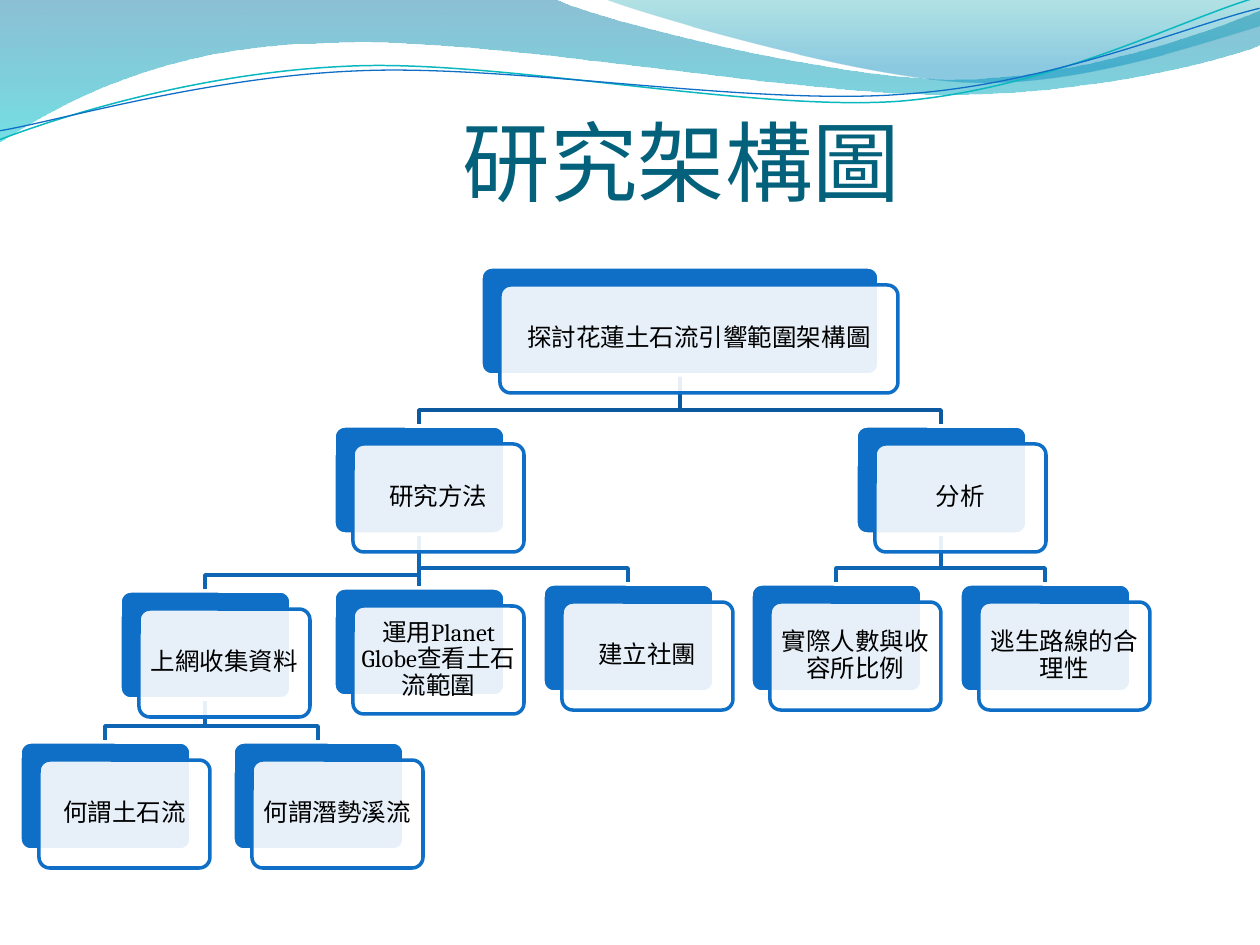
from lxml import etree
from pptx import Presentation
from pptx import util as u
from pptx.dml.color import RGBColor
from pptx.enum import shapes as s, text as t
from pptx.oxml.ns import qn

PX = 914400 / 126
BLUE = "0F6FC6"
rgb = RGBColor.from_string


def trace(pts, shut):
    """Draw a path; a pair is a line end, six numbers are a Bezier curve."""
    ends = [seg[-2:] for seg in pts]
    pen = tree.build_freeform(*ends[0], PX)
    pen.add_line_segments(ends[1:], close=shut)
    form = pen.convert_to_shape()
    form.shadow.inherit = False
    if not shut:
        form.fill.background()
    # turn line segments into curves where six numbers are given
    x, y = min(p for p, q in ends), min(q for p, q in ends)
    steps = form._element.findall(".//" + qn("a:lnTo"))
    for step, seg in zip(steps, pts[1:]):
        if len(seg) == 6:
            step.clear()
            curve = etree.SubElement(step.getparent(), qn("a:cubicBezTo"))
            step.getparent().replace(step, curve)
            for p, q in zip(seg[::2], seg[1::2]):
                dot = etree.SubElement(curve, qn("a:pt"))
                dot.set("x", str(p - x))
                dot.set("y", str(q - y))
    return form


def fade(node, pct):
    """Set the opacity of the colour inside an XML node."""
    tone = node.find(".//" + qn("a:srgbClr"))
    etree.SubElement(tone, qn("a:alpha")).set("val", str(pct * 1000))


deck = Presentation()
deck.slide_width, deck.slide_height = u.Inches(10), u.Inches(7.5)
slide = deck.slides.add_slide(deck.slide_layouts[5])
tree = slide.shapes

# Waves: points, then (position, colour, opacity) of each stop
waves = [
    ([(0, 0), (554, -1), (600, 21, 837, 79, 955, 79),
      (1075, 79, 1207, 33, 1260, 11), (1261, 45),
      (1239, 55, 1096, 96, 940, 94), (783, 94, 481, 35, 324, 43),
      (163, 45, 58, 105, -1, 142)],
     [(0, "0074A1", 45), (100, "00C6CF", 55)]),
    ([(604, -1), (641, 14, 859, 78, 969, 82),
      (1079, 87, 1211, 40, 1260, 26), (1260, 0)],
     [(0, "00A1A9", 30), (80, "008BBF", 45)]),
]
for pts, stops in waves:
    wave = trace(pts, True)
    wave.line.fill.background()
    wave.fill.gradient()
    wave.fill.gradient_angle = 270
    nodes = wave._element.spPr.findall(".//" + qn("a:gs"))
    for stop, node, (pos, hue, pct) in zip(wave.fill.gradient_stops, nodes, stops):
        stop.color.rgb = rgb(hue)
        node.set("pos", str(pos * 1000))
        fade(node, pct)

# Thin curves, drawn level and then tilted
curves = [
    ([(-3, 110), (58, 90, 199, 52, 350, 53), (499, 53, 745, 117, 896, 114),
      (1049, 109, 1184, 45, 1260, 27)], "0AB8BF", 0.85),
    ([(-2, 101), (57, 94, 207, 57, 357, 58), (509, 58, 750, 112, 902, 107),
      (1052, 104, 1188, 52, 1262, 38)], BLUE, 0.75),
]
for pts, hue, size in curves:
    curve = trace(pts, False)
    curve.rotation = 357.3
    curve.line.color.rgb = rgb(hue)
    curve.line.width = u.Pt(size)

# Tree: name -> left, top, width, parent, label
TALL, BEND, SIDE = 108, 16, 6
boxes = {
    "root": (481, 267, 398, None, "探討花蓮土石流引響範圍架構圖"),
    "method": (334, 426, 171, "root", "研究方法"),
    "web": (120, 591, 171, "method", "上網收集資料"),
    "flow": (20, 742, 171, "web", "何謂土石流"),
    "creek": (233, 742, 171, "web", "何謂潛勢溪流"),
    "globe": (334, 588, 171, "method", "運用Planet Globe查看土石流範圍"),
    "club": (543, 584, 171, "method", "建立社團"),
    "study": (856, 426, 171, "root", "分析"),
    "ratio": (751, 584, 171, "study", "實際人數與收容所比例"),
    "route": (960, 584, 171, "study", "逃生路線的合理性"),
}

# Links run from the parent's foot to the child's head
for left, top, wide, parent, label in reversed(boxes.values()):
    if parent is None:
        continue
    x, y, w = boxes[parent][:3]
    start, end = x + w // 2, left + wide // 2
    foot = y + TALL
    if start == end:
        link = trace([(start, foot), (end, top)], False)
        # give the upright link a frame with room on both sides
        link.left -= round(SIDE * PX)
        link.width = round(2 * SIDE * PX)
        link._element.find(".//" + qn("a:path")).set("w", str(2 * SIDE))
        for dot in link._element.iter(qn("a:pt")):
            dot.set("x", str(SIDE))
    else:
        link = trace([(start, foot), (start, top - BEND),
                      (end, top - BEND), (end, top)], False)
    link.line.color.rgb = rgb("0C599F" if parent == "root" else "0E65B4")
    link.line.width = u.Pt(2)

# Each box is a blue back card, a white front card and a label
texts = []
for left, top, wide, parent, label in boxes.values():
    for dx, dy, fill, edge in [(0, 0, BLUE, "FFFFFF"), (19, 18, "FFFFFF", BLUE)]:
        area = [round(v * PX) for v in (left + dx, top + dy, wide, TALL)]
        card = tree.add_shape(s.MSO_SHAPE.ROUNDED_RECTANGLE, *area)
        card.adjustments[0] = 0.1
        card.shadow.inherit = False
        card.fill.solid()
        card.fill.fore_color.rgb = rgb(fill)
        card.line.color.rgb = rgb(edge)
        card.line.width = u.Pt(2)
    fade(card._element.spPr.find(qn("a:solidFill")), 90)
    texts.append((tree.add_textbox(*area), label, 14, "Cambria", "000000", 0.9,
                  (8, 8, 8, 8), t.MSO_ANCHOR.MIDDLE))

# Title
title = tree.title
place = {"left": 144, "top": 86, "width": 1075, "height": 127}
for key, val in place.items():
    setattr(title, key, round(val * PX))
texts.append((title, "研究架構圖", 50, "Noto Sans CJK SC", "04617B", 1.0,
              (0, 6, 0, 0), t.MSO_ANCHOR.BOTTOM))

# Wording and text format
for shape, label, size, face, hue, lead, pads, anchor in texts:
    frame = shape.text_frame
    frame.text = label
    form = {"word_wrap": True, "auto_size": t.MSO_AUTO_SIZE.NONE,
            "vertical_anchor": anchor}
    for side, pad in zip(("left", "top", "right", "bottom"), pads):
        form["margin_" + side] = round(pad * PX)
    for key, val in form.items():
        setattr(frame, key, val)
    para = frame.paragraphs[0]
    para.alignment = t.PP_ALIGN.CENTER
    para.line_spacing = lead
    run = para.runs[0]
    run.font.size = u.Pt(size)
    run.font.color.rgb = rgb(hue)
    run.font.name = face
    east = etree.SubElement(run._r.get_or_add_rPr(), qn("a:ea"))
    east.set("typeface", "Noto Sans CJK SC")

deck.save("out.pptx")
